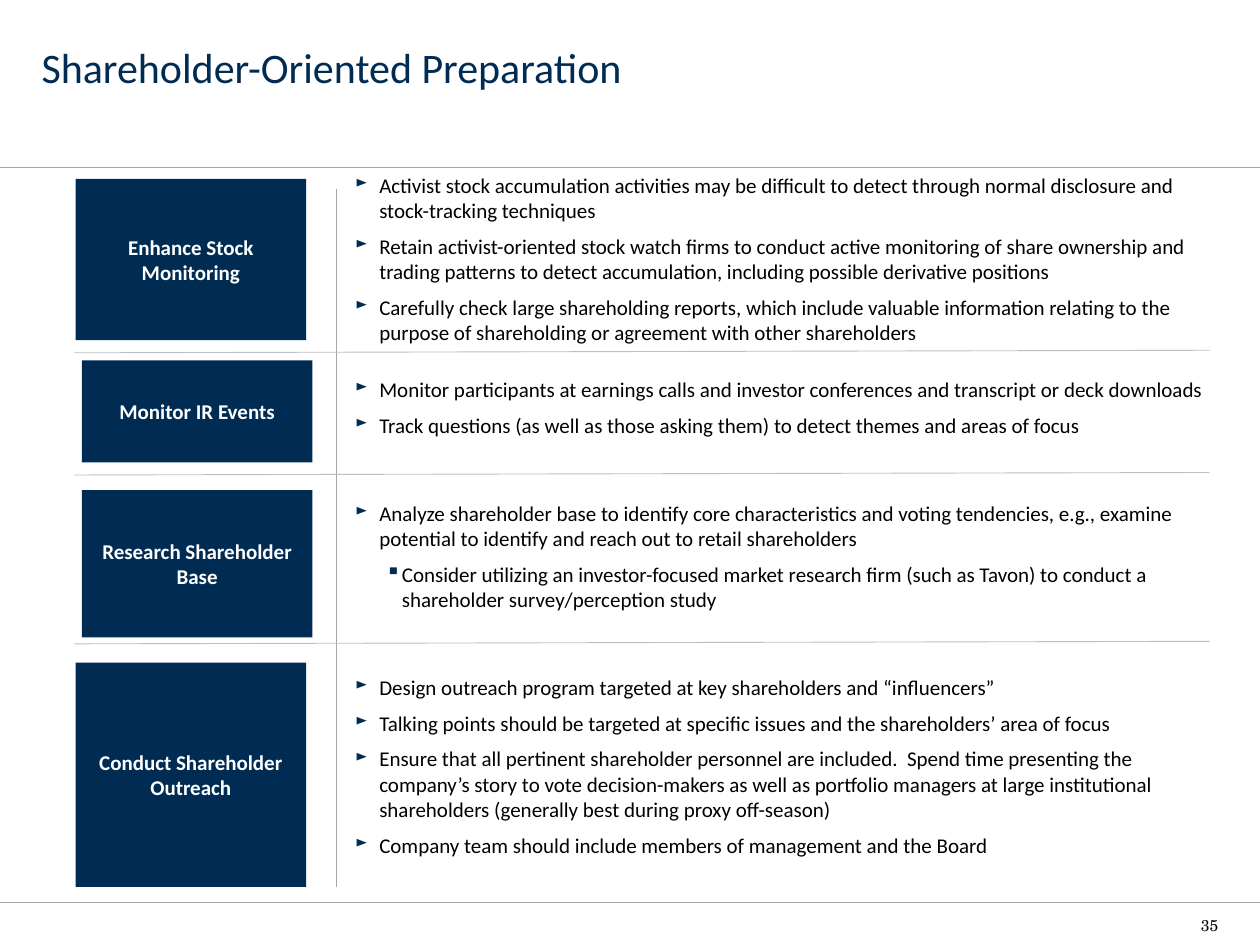
from lxml.etree import SubElement as Sub
from pptx import Presentation
from pptx.dml.color import RGBColor
from pptx.enum.shapes import MSO_CONNECTOR as Conn, MSO_SHAPE as Shape
from pptx.enum.text import MSO_ANCHOR as Anchor, PP_ALIGN as Align
from pptx.oxml.ns import qn
from pptx.util import Inches, Pt

NAVY, BLACK, WHITE = "002C54", "000000", "FFFFFF"
GRAY, PALE = "A6A6A6", "BFBFBF"
SANS, SERIF = "Calibri", "TeX Gyre Schola"
MAIN = ("►", 0.19, -0.19, 75)
SUB = ("▪", 0.37, -0.13, 100)

TOPICS = [
    ("Enhance Stock Monitoring", (0.6, 1.42, 1.83, 1.28)),
    ("Monitor IR Events", (0.65, 2.86, 1.83, 0.81)),
    ("Research Shareholder Base", (0.65, 3.89, 1.83, 1.17)),
    ("Conduct Shareholder Outreach", (0.6, 5.26, 1.83, 1.78)),
]
POINTS = [
    (6, [
        (MAIN, "Activist stock accumulation activities may be difficult to detect through normal disclosure and stock-tracking techniques"),
        (MAIN, "Retain activist-oriented stock watch firms to conduct active monitoring of share ownership and trading patterns to detect accumulation, including possible derivative positions"),
        (MAIN, "Carefully check large shareholding reports, which include valuable information relating to the purpose of shareholding or agreement with other shareholders"),
    ]),
    (18, [
        (MAIN, "Monitor participants at earnings calls and investor conferences and transcript or deck downloads"),
        (MAIN, "Track questions (as well as those asking them) to detect themes and areas of focus"),
    ]),
    (36, [
        (MAIN, "Analyze shareholder base to identify core characteristics and voting tendencies, e.g., examine potential to identify and reach out to retail shareholders"),
        (SUB, "Consider utilizing an investor-focused market research firm (such as Tavon) to conduct a shareholder survey/perception study"),
    ]),
    (36, [
        (MAIN, "Design outreach program targeted at key shareholders and “influencers”"),
        (MAIN, "Talking points should be targeted at specific issues and the shareholders’ area of focus"),
        (MAIN, "Ensure that all pertinent shareholder personnel are included.  Spend time presenting the company’s story to vote decision-makers as well as portfolio managers at large institutional shareholders (generally best during proxy off-season)"),
        (MAIN, "Company team should include members of management and the Board"),
    ]),
]


def color(code):
    return RGBColor.from_string(code)


def inches(box):
    return [Inches(v) for v in box]


def set_frame(frame, pads, anchor):
    frame.word_wrap = True
    frame.vertical_anchor = anchor
    (frame.margin_left, frame.margin_top,
     frame.margin_right, frame.margin_bottom) = inches(pads)


def add_run(para, text, size, tint, font=SANS, bold=False):
    run = para.add_run()
    run.text = text
    run.font.name = font
    run.font.size = Pt(size)
    run.font.bold = bold
    run.font.color.rgb = color(tint)


def add_text(slide, box, pads=(0, 0, 0, 0), anchor=Anchor.TOP):
    frame = slide.shapes.add_textbox(*inches(box)).text_frame
    set_frame(frame, pads, anchor)
    return frame


def add_rule(slide, ends, tint):
    line = slide.shapes.add_connector(Conn.STRAIGHT, *inches(ends))
    line.line.color.rgb = color(tint)
    line.line.width = Pt(0.5)
    Sub(line._element.spPr, qn("a:effectLst"))


def set_bullet(para, mark, left, hang, scale):
    props = para._p.get_or_add_pPr()
    props.set("marL", str(Inches(left)))
    props.set("indent", str(Inches(hang)))
    tint = Sub(props, qn("a:buClr"))
    Sub(tint, qn("a:srgbClr"), val=NAVY)
    Sub(props, qn("a:buSzPct"), val=str(scale * 1000))
    Sub(props, qn("a:buChar"), char=mark)


def add_title(slide, box):
    frame = add_text(slide, box, (0, 0.05, 0.1, 0.05))
    add_run(frame.paragraphs[0], "Shareholder-Oriented Preparation", 24, NAVY)


def add_topic(slide, box, text):
    tile = slide.shapes.add_shape(Shape.RECTANGLE, *inches(box))
    tile.shadow.inherit = False
    tile.fill.solid()
    tile.fill.fore_color.rgb = color(NAVY)
    tile.line.fill.background()
    set_frame(tile.text_frame, (0.09, 0.04, 0.09, 0.04), Anchor.MIDDLE)
    para = tile.text_frame.paragraphs[0]
    para.alignment = Align.CENTER
    add_run(para, text, 12, WHITE, bold=True)


def add_points(slide, box):
    frame = add_text(slide, box)
    para = frame.paragraphs[0]
    for gap, group in POINTS:
        for style, text in group:
            if para.runs:
                para = frame.add_paragraph()
            para.level = 1 if style is SUB else 0
            para.space_before = Pt(gap)
            set_bullet(para, *style)
            add_run(para, text, 12, BLACK)
            gap = 6


def add_number(slide, box):
    para = add_text(slide, box, anchor=Anchor.BOTTOM).paragraphs[0]
    para.alignment = Align.RIGHT
    add_run(para, "35", 9, BLACK, SERIF)


def main():
    deck = Presentation()
    deck.slide_width, deck.slide_height = Inches(10), Inches(7.5)
    slide = deck.slides.add_slide(deck.slide_layouts[6])
    for y in (7.16, 1.33):
        add_rule(slide, (0, y, 10, y), GRAY)
    add_rule(slide, (2.67, 7.04, 2.67, 1.5), GRAY)
    add_points(slide, (2.82, 1.37, 6.85, 5.54))
    add_number(slide, (8.96, 7.21, 0.71, 0.21))
    add_title(slide, (0.33, 0.28, 9.34, 1.02))
    for y in (2.8, 3.77, 5.11):
        add_rule(slide, (0.59, y, 9.6, y - 0.02), PALE)
    for text, box in TOPICS:
        add_topic(slide, box, text)
    deck.save("out.pptx")


if __name__ == "__main__":
    main()
